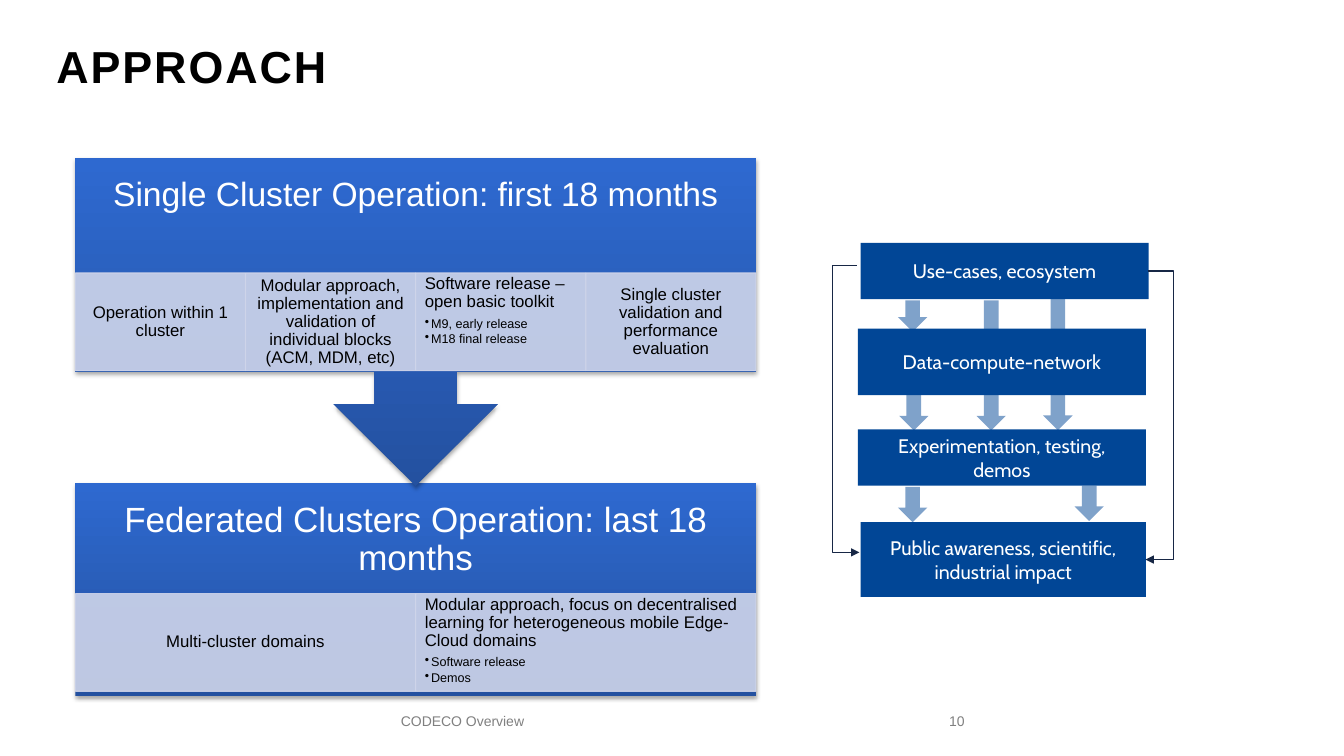
"""Builds the project approach slide: two operation phases and the impact flow."""
from dataclasses import dataclass

from lxml.etree import SubElement
from pptx import Presentation
from pptx.dml.color import RGBColor
from pptx.enum.shapes import MSO_CONNECTOR as Link, MSO_SHAPE as Shape
from pptx.enum.text import MSO_ANCHOR as Anchor, MSO_AUTO_SIZE as AutoSize, PP_ALIGN as Align
from pptx.oxml.ns import qn
from pptx.util import Cm, Pt


@dataclass(frozen=True)
class Theme:
    """Colours, fonts and type sizes of the slide."""
    ink: str = "000000"
    white: str = "FFFFFF"
    grey: str = "808080"
    navy: str = "014696"
    wire: str = "172745"
    cell: str = "CFD5EA"
    deep: str = "2451A0"
    bright: str = "2E69D0"
    font: str = "Arial"
    flow_font: str = "Cabin"
    title: int = 32
    federated: int = 25
    single: int = 24
    flow: int = 14
    body: int = 12
    footer: int = 10
    bullet: int = 9


THEME = Theme()
PANEL_LEFT, PANEL_WIDTH = 1.9, 17.15
CELL_HEIGHT = 2.46
PLAIN_INSETS = (0.25, 0.13, 0.25, 0.13)
CELL_INSETS = (0.23, 0.05, 0.23, 0.05)

SINGLE_CELLS = [
    ("Operation within 1 cluster",),
    ("Modular approach, implementation and validation of individual blocks (ACM, MDM, etc)",),
    ("Software release – open basic toolkit", "M9, early release", "M18 final release"),
    ("Single cluster validation and performance evaluation",),
]
FEDERATED_CELLS = [
    ("Multi-cluster domains",),
    ("Modular approach, focus on decentralised learning for heterogeneous mobile Edge-Cloud domains",
     "Software release", "Demos"),
]
FLOW_BOXES = [
    ("Use-cases, ecosystem", 21.69, 6.12, 7.26, 1.42),
    ("Data-compute-network", 21.62, 8.28, 7.26, 1.68),
    ("Experimentation, testing, demos", 21.62, 10.82, 7.26, 1.42),
    ("Public awareness, scientific, industrial impact", 21.69, 13.16, 7.19, 1.88),
]
LONG_ARROWS = [(26.29, 7.54, 3.3), (24.61, 7.57, 3.28)]
SHORT_ARROWS = [(22.63, 7.57, 0.79), (22.66, 9.96, 0.89), (22.63, 12.27, 0.89), (27.08, 12.24, 0.89)]


def rgb(code):
    """Turn a hex code into a colour."""
    return RGBColor.from_string(code)


def set_frame(frame, insets=PLAIN_INSETS, anchor=Anchor.MIDDLE):
    """Set wrapping, margins and anchor of a text frame."""
    frame.word_wrap = True
    frame.auto_size = AutoSize.NONE
    frame.vertical_anchor = anchor
    frame.margin_left, frame.margin_top, frame.margin_right, frame.margin_bottom = map(Cm, insets)


def write(para, text, *, size, color=THEME.ink, font=THEME.font, bold=False,
          align=Align.LEFT, after=0, spacing=None, tracking=None):
    """Fill a paragraph with one formatted run."""
    para.alignment = align
    para.space_before = Pt(0)
    para.space_after = Pt(after)
    para.line_spacing = spacing
    span = para.add_run()
    span.text = text
    span.font.name, span.font.size, span.font.bold = font, Pt(size), bold
    span.font.color.rgb = rgb(color)
    if tracking:
        span.font._element.set("spc", str(tracking))


def add_bullet(para):
    """Give a paragraph a small hanging bullet."""
    para.level = 1
    props = para._p.get_or_add_pPr()
    props.set("marL", str(Cm(0.16)))
    props.set("indent", str(Cm(-0.16)))
    SubElement(SubElement(props, qn("a:buClr")), qn("a:srgbClr"), val=THEME.ink)
    SubElement(props, qn("a:buChar"), char="•")


def set_alpha(shape, percent):
    """Make the fill and line colours of a shape partly transparent."""
    for color in shape._element.spPr.iter(qn("a:srgbClr")):
        SubElement(color, qn("a:alpha"), val=str(percent * 1000))


def add_block(page, preset, left, top, width, height, fill=None):
    """Add a preset shape without line or shadow."""
    block = page.shapes.add_shape(preset, Cm(left), Cm(top), Cm(width), Cm(height))
    block.shadow.inherit = False
    block.line.fill.background()
    if fill:
        block.fill.solid()
        block.fill.fore_color.rgb = rgb(fill)
    return block


def add_banner(page, preset, top, height, text, size, insets, anchor):
    """Add a phase banner with a vertical gradient and a soft shadow."""
    banner = add_block(page, preset, PANEL_LEFT, top, PANEL_WIDTH, height)
    banner.fill.gradient()
    banner.fill.gradient_angle = 90
    for stop, color in zip(banner.fill.gradient_stops, (THEME.deep, THEME.bright)):
        stop.color.rgb = rgb(color)
    shadow = SubElement(banner._element.spPr.find(qn("a:effectLst")), qn("a:outerShdw"),
                        blurRad=str(Pt(3.1)), dist=str(Pt(1.8)), dir="5400000", rotWithShape="0")
    SubElement(SubElement(shadow, qn("a:srgbClr"), val=THEME.ink), qn("a:alpha"), val="35000")
    set_frame(banner.text_frame, insets, anchor)
    write(banner.text_frame.paragraphs[0], text, size=size, color=THEME.white,
          align=Align.CENTER, spacing=0.9)
    return banner


def add_cells(page, top, cells):
    """Add a row of equal cells, each with a heading and optional bullets."""
    width = PANEL_WIDTH / len(cells)
    for column, (heading, *bullets) in enumerate(cells):
        cell = add_block(page, Shape.RECTANGLE, PANEL_LEFT + column * width, top,
                         width, CELL_HEIGHT, THEME.cell)
        cell.line.color.rgb = rgb(THEME.cell)
        cell.line.width = Pt(0.75)
        set_alpha(cell, 90)
        frame = cell.text_frame
        set_frame(frame, CELL_INSETS, Anchor.TOP if bullets else Anchor.MIDDLE)
        write(frame.paragraphs[0], heading, size=THEME.body, after=4.2, spacing=0.9,
              align=Align.LEFT if bullets else Align.CENTER)
        for text in bullets:
            para = frame.add_paragraph()
            add_bullet(para)
            write(para, text, size=THEME.bullet, after=1.4, spacing=0.9)


def add_flow_box(page, text, *place):
    """Add one step of the impact flow."""
    box = add_block(page, Shape.RECTANGLE, *place, THEME.navy)
    set_frame(box.text_frame)
    write(box.text_frame.paragraphs[0], text, size=THEME.flow, color=THEME.white,
          font=THEME.flow_font, align=Align.CENTER, after=8)


def add_flow_arrow(page, left, top, height):
    """Add a translucent down arrow."""
    set_alpha(add_block(page, Shape.DOWN_ARROW, left, top, 0.74, height, THEME.navy), 50)


def add_bypass(page, start_x, start_y, end_x, end_y, bend_x):
    """Add an elbow arrow that runs around the flow at bend_x."""
    link = page.shapes.add_connector(Link.ELBOW, Cm(start_x), Cm(start_y), Cm(end_x), Cm(end_y))
    link.line.color.rgb = rgb(THEME.wire)
    link.line.width = Pt(0.75)
    props = link._element.spPr
    bend = round((bend_x - start_x) / (end_x - start_x) * 100000)
    guides = props.find(qn("a:prstGeom")).get_or_add_avLst()
    SubElement(guides, qn("a:gd"), name="adj1", fmla=f"val {bend}")
    SubElement(props.find(qn("a:ln")), qn("a:tailEnd"), type="triangle")
    SubElement(props, qn("a:effectLst"))


def add_footer(page, text, left, width, align):
    """Add a grey footer text."""
    box = page.shapes.add_textbox(Cm(left), Cm(17.65), Cm(width), Cm(1.02))
    set_frame(box.text_frame)
    write(box.text_frame.paragraphs[0], text, size=THEME.footer, color=THEME.grey, align=align)


def main():
    """Build and save the slide."""
    deck = Presentation()
    deck.slide_width, deck.slide_height = Cm(33.87), Cm(19.05)
    page = deck.slides.add_slide(deck.slide_layouts[5])
    title = page.shapes.title
    title.left, title.top, title.width, title.height = map(Cm, (1.17, 0.38, 24.54, 2.11))
    set_frame(title.text_frame, anchor=Anchor.BOTTOM)
    write(title.text_frame.paragraphs[0], "APPROACH", size=THEME.title, bold=True,
          spacing=0.9, tracking=140)

    for arrow in LONG_ARROWS:
        add_flow_arrow(page, *arrow)
    for step in FLOW_BOXES:
        add_flow_box(page, *step)
    for arrow in SHORT_ARROWS:
        add_flow_arrow(page, *arrow)
    add_bypass(page, 28.93, 6.83, 28.87, 14.1, 29.57)
    add_bypass(page, 21.59, 6.68, 21.66, 13.92, 20.98)

    add_banner(page, Shape.RECTANGLE, 12.17, 5.36, "Federated Clusters Operation: last 18 months",
               THEME.federated, (0.48, 0.99, 0.48, 3.45), Anchor.MIDDLE)
    add_cells(page, 14.96, FEDERATED_CELLS)
    callout = add_banner(page, Shape.DOWN_ARROW_CALLOUT, 3.99, 8.26,
                         "Single Cluster Operation: first 18 months",
                         THEME.single, (0.48,) * 4, Anchor.TOP)
    for index, share in enumerate((0.25, 0.25, 0.25, 0.65)):
        callout.adjustments[index] = share
    add_cells(page, 6.88, SINGLE_CELLS)

    add_footer(page, "CODECO Overview", 6.83, 9.65, Align.CENTER)
    add_footer(page, "10", 16.94, 7.62, Align.RIGHT)
    deck.save("out.pptx")


if __name__ == "__main__":
    main()
